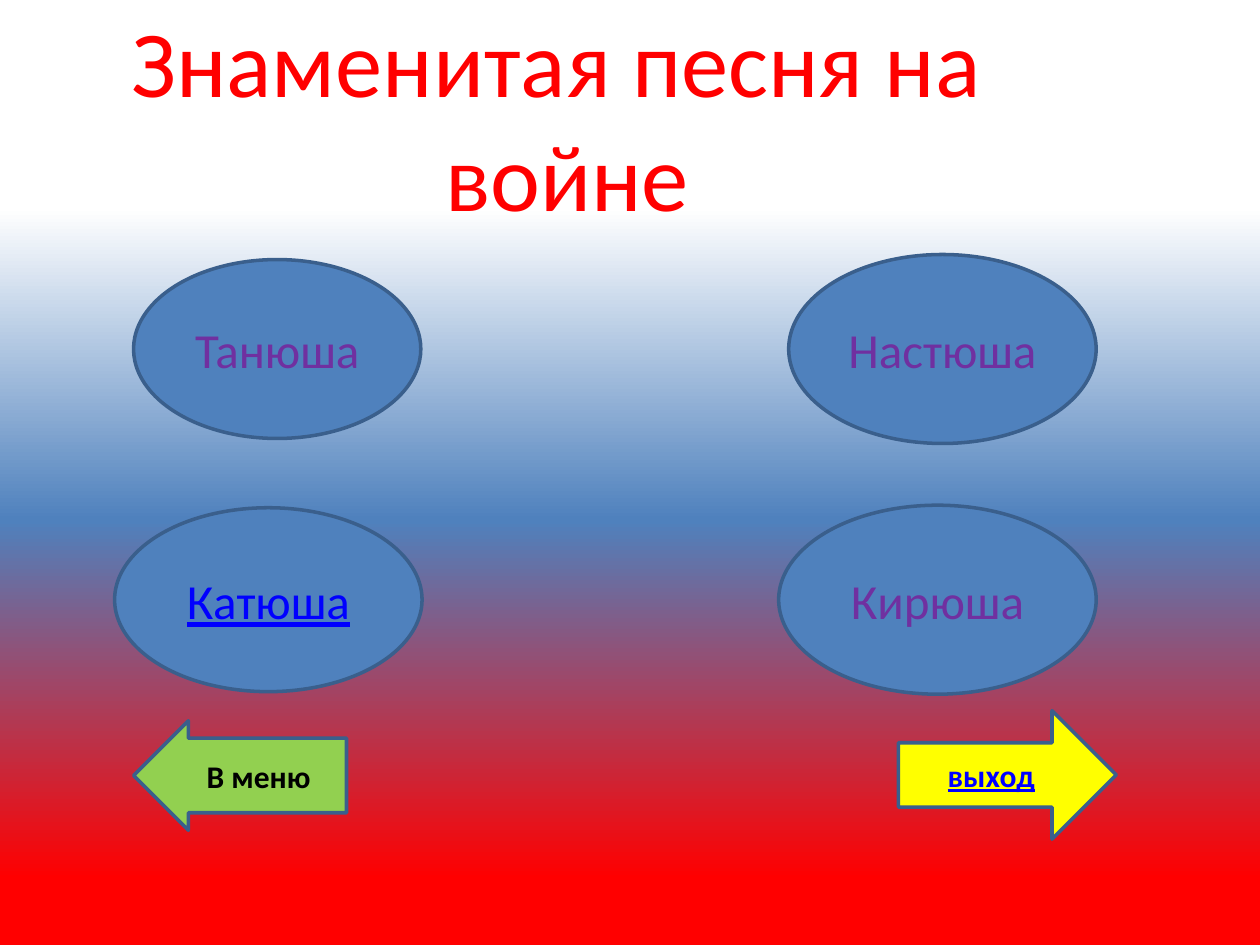
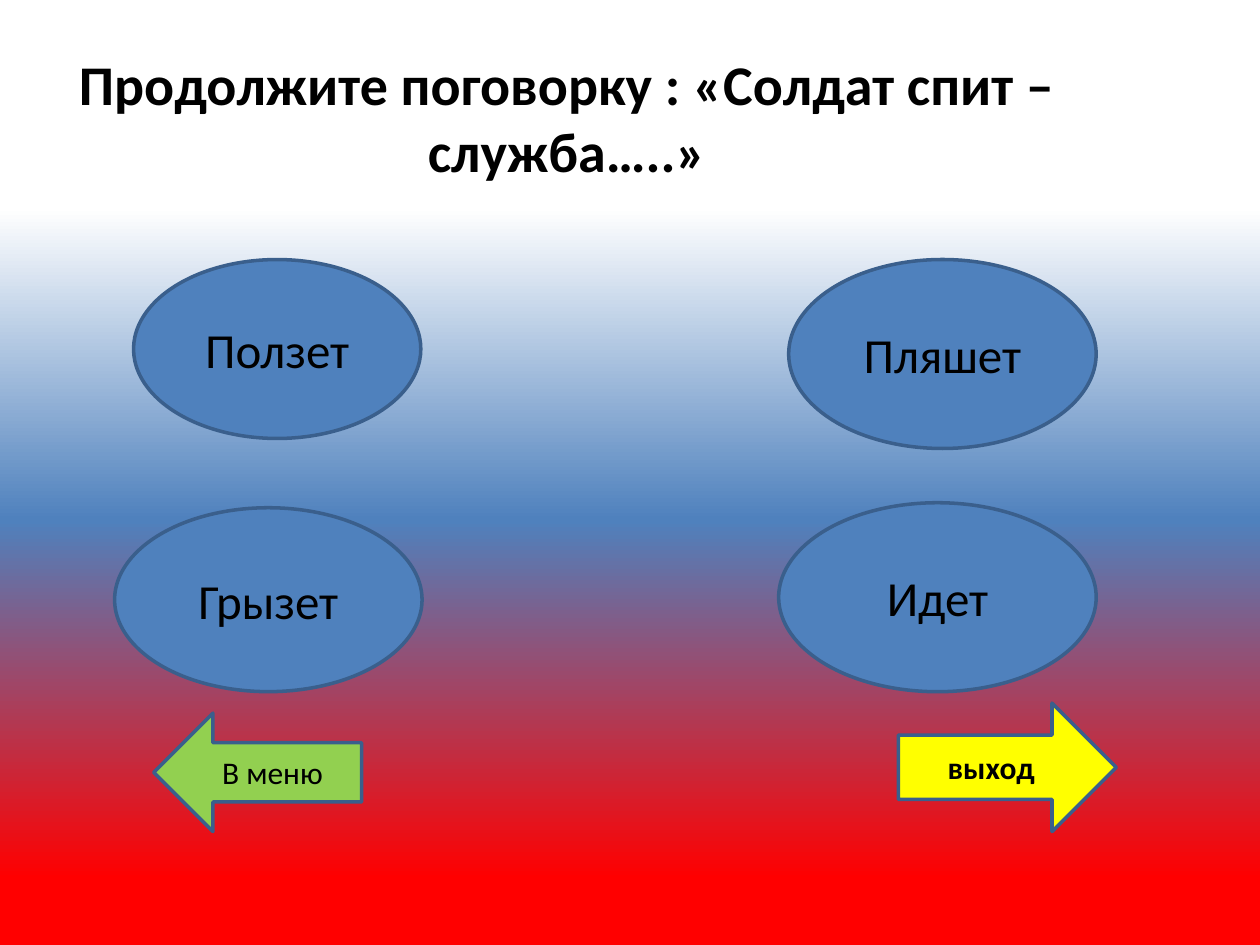
from lxml.etree import SubElement
from pptx import Presentation
from pptx.dml.color import RGBColor
from pptx.enum.shapes import MSO_SHAPE
from pptx.enum.text import MSO_ANCHOR, PP_ALIGN
from pptx.oxml.ns import qn
from pptx.util import Emu, Pt

PX = 9144
FONT = "Calibri"
COLORS = {
    "white": "FFFFFF", "blue": "4F81BD", "red": "FF0000", "outline": "3A5F8C",
    "purple": "7030A0", "link": "0000FF", "black": "000000",
    "yellow": "FFFF00", "green": "92D050",
}
BACKGROUND_STOPS = [(22, "white"), (55, "blue"), (93, "red")]


def rgb(name):
    """Return the named colour."""
    return RGBColor.from_string(COLORS[name])


class Quiz:
    """Holds the quiz style and the current slide."""

    def __init__(self):
        """Open a deck of 1000 by 750 px."""
        self.prs = Presentation()
        self.prs.slide_width = Emu(1000 * PX)
        self.prs.slide_height = Emu(750 * PX)
        self.s = None

    def slide(self):
        """Start a blank slide with the tricolour gradient."""
        self.s = self.prs.slides.add_slide(self.prs.slide_layouts[6])
        fill = self.s.background.fill
        fill.gradient()
        fill.gradient_angle = 270
        stops = self.s.element.find(".//" + qn("a:gsLst"))
        for stop in list(stops):
            stops.remove(stop)
        for percent, color in BACKGROUND_STOPS:
            stop = SubElement(stops, qn("a:gs"), pos=str(percent * 1000))
            SubElement(stop, qn("a:srgbClr"), val=COLORS[color])

    def text(self, sp, text, size, color, bold=False, underline=False):
        """Write one centred paragraph into a shape."""
        tf = sp.text_frame
        tf.text = text
        tf.word_wrap = True
        tf.vertical_anchor = MSO_ANCHOR.MIDDLE
        p = tf.paragraphs[0]
        p.alignment = PP_ALIGN.CENTER
        font = p.runs[0].font
        font.name, font.size = FONT, Pt(size)
        font.bold, font.underline = bold, underline
        font.color.rgb = rgb(color)

    def title(self, text, size, color, bold=False):
        """Add the question at the top."""
        box = [Emu(v * PX) for v in (0, 30, 900, 125)]
        self.text(self.s.shapes.add_textbox(*box), text, size, color, bold)

    def shape(self, kind, box, fill, adjust=None):
        """Add an outlined preset shape."""
        sp = self.s.shapes.add_shape(kind, *[Emu(v * PX) for v in box])
        sp.shadow.inherit = False
        sp.fill.solid()
        sp.fill.fore_color.rgb = rgb(fill)
        sp.line.color.rgb = rgb("outline")
        sp.line.width = Pt(2)
        if adjust is not None:
            sp.adjustments[0] = adjust
        return sp

    def answer(self, text, box, color, underline=False):
        """Add an answer oval."""
        sp = self.shape(MSO_SHAPE.OVAL, box, "blue")
        self.text(sp, text, 28, color, underline=underline)

    def exit_arrow(self, top, color, underline=False):
        """Add the yellow arrow that leaves the quiz."""
        sp = self.shape(MSO_SHAPE.RIGHT_ARROW, (713, top, 173, 102), "yellow")
        self.text(sp, "выход", 18, color, True, underline)

    def menu_arrow(self, box, bold=False, adjust=None):
        """Add the green arrow back to the menu."""
        sp = self.shape(MSO_SHAPE.LEFT_ARROW, box, "green", adjust)
        self.text(sp, "В меню", 18, "black", bold)


def main():
    """Build both question slides."""
    quiz = Quiz()
    top_left, bottom_left = (106, 206, 228, 142), (91, 403, 244, 146)

    quiz.slide()
    quiz.title("Знаменитая песня на  войне", 54, "red")
    quiz.answer("Кирюша", (618, 401, 252, 150), "purple")
    quiz.answer("Настюша", (626, 202, 244, 150), "purple")
    quiz.answer("Катюша", bottom_left, "link", underline=True)
    quiz.answer("Танюша", top_left, "purple")
    quiz.exit_arrow(564, "link", underline=True)
    quiz.menu_arrow((106, 572, 169, 87), bold=True, adjust=0.68)

    quiz.slide()
    quiz.title("Продолжите поговорку : «Солдат спит –служба…..»", 32, "black", bold=True)
    quiz.answer("Идет", (618, 399, 252, 150), "black")
    quiz.answer("Пляшет", (626, 206, 244, 150), "black")
    quiz.answer("Грызет", bottom_left, "black")
    quiz.answer("Ползет", top_left, "black")
    quiz.exit_arrow(558, "black")
    quiz.menu_arrow((122, 566, 165, 94))

    quiz.prs.save("out.pptx")


if __name__ == "__main__":
    main()
